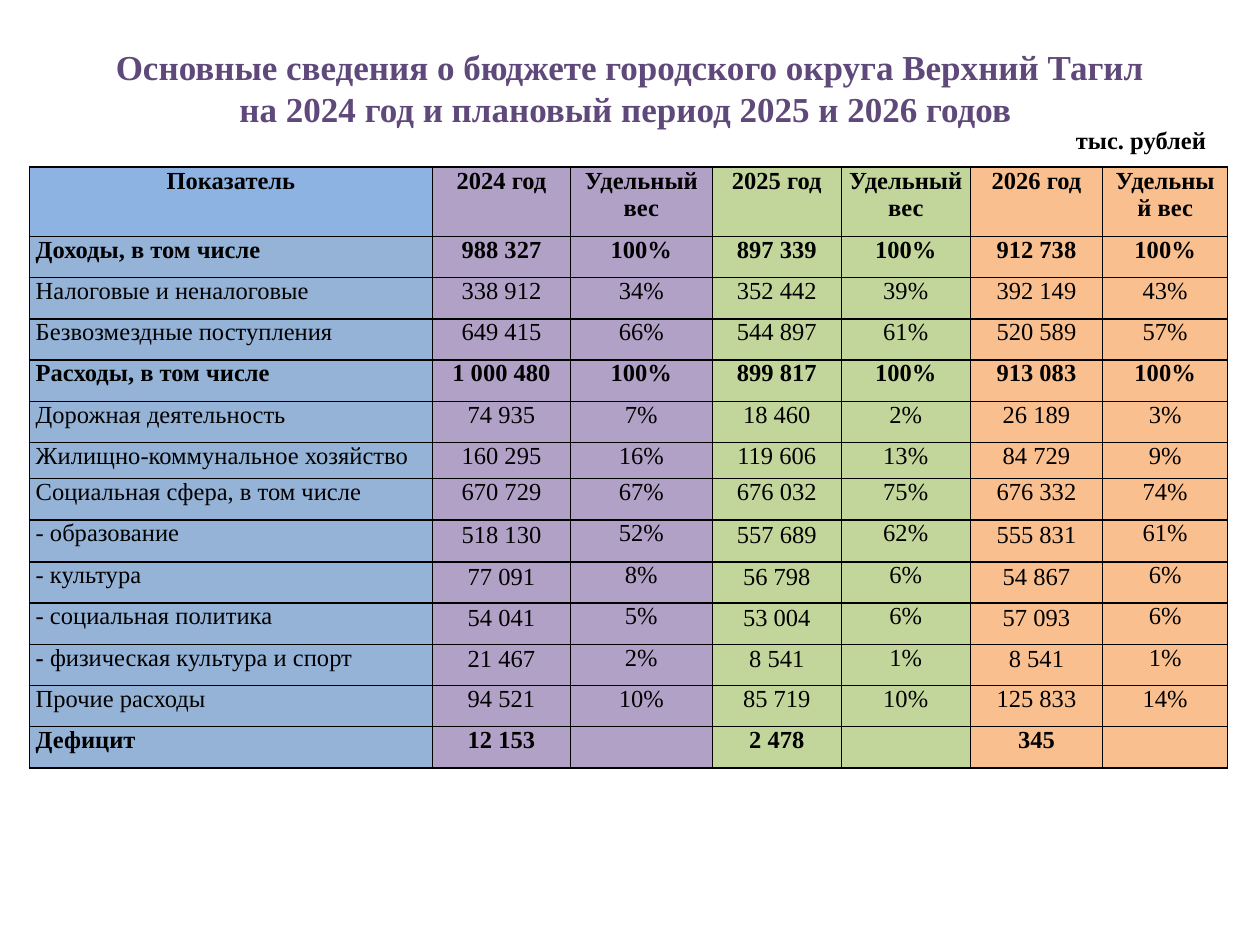
"""Build the slide with the town budget table for 2024-2026."""
from dataclasses import dataclass

from lxml.etree import SubElement
from pptx import Presentation
from pptx.dml.color import RGBColor
from pptx.enum.text import MSO_ANCHOR, MSO_AUTO_SIZE, PP_ALIGN
from pptx.oxml.ns import qn
from pptx.util import Cm, Pt

FONT = "Times New Roman"
COLORS = {
    "title": "5F497A",
    "text": "000000",
    "border": "000000",
    "header": "8DB3E2",
    "label": "95B3D7",
    "2024": "B2A1C7",
    "2025": "C2D69B",
    "2026": "FABF8F",
}
COLUMN_FILLS = ["label", "2024", "2024", "2025", "2025", "2026", "2026"]
COLUMN_WIDTHS = [8.13, 2.78, 2.86, 2.6, 2.6, 2.67, 2.52]
ROW_HEIGHT = 0.83


@dataclass
class BudgetRow:
    label: str
    values: list[str]
    bold: bool = False
    height: float = ROW_HEIGHT
    bold_dash: bool = False


SHARE = "Удельный вес"
ROWS = [
    BudgetRow("Показатель", ["2024 год", SHARE, "2025 год", SHARE, "2026 год", SHARE], True, 1.4),
    BudgetRow("Доходы, в том числе", ["988 327", "100%", "897 339", "100%", "912 738", "100%"], True),
    BudgetRow("Налоговые и неналоговые", ["338 912", "34%", "352 442", "39%", "392 149", "43%"]),
    BudgetRow("Безвозмездные поступления", ["649 415", "66%", "544 897", "61%", "520 589", "57%"]),
    BudgetRow("Расходы, в том числе", ["1 000 480", "100%", "899 817", "100%", "913 083", "100%"], True),
    BudgetRow("Дорожная деятельность", ["74 935", "7%", "18 460", "2%", "26 189", "3%"]),
    BudgetRow("Жилищно-коммунальное хозяйство", ["160 295", "16%", "119 606", "13%", "84 729", "9%"], height=0.73),
    BudgetRow("Социальная сфера, в том числе", ["670 729", "67%", "676 032", "75%", "676 332", "74%"]),
    BudgetRow("- образование", ["518 130", "52%", "557 689", "62%", "555 831", "61%"], height=0.85),
    BudgetRow("- культура", ["77 091", "8%", "56 798", "6%", "54 867", "6%"]),
    BudgetRow("- социальная политика", ["54 041", "5%", "53 004", "6%", "57 093", "6%"]),
    BudgetRow("- физическая культура и спорт", ["21 467", "2%", "8 541", "1%", "8 541", "1%"], bold_dash=True),
    BudgetRow("Прочие расходы", ["94 521", "10%", "85 719", "10%", "125 833", "14%"]),
    BudgetRow("Дефицит", ["12 153", "", "2 478", "", "345", ""], True),
]


def color(name: str) -> RGBColor:
    return RGBColor.from_string(COLORS[name])


def format_paragraph(paragraph, size: int, color_name: str, bold: bool, alignment: PP_ALIGN) -> None:
    paragraph.alignment = alignment
    font = paragraph.font
    font.name, font.size, font.bold = FONT, Pt(size), bold
    font.color.rgb = color(color_name)


def add_borders(cell) -> None:
    properties = cell._tc.get_or_add_tcPr()
    for position, side in enumerate(("lnL", "lnR", "lnT", "lnB")):
        line = SubElement(properties, qn(f"a:{side}"), w=str(Pt(1)))
        fill = SubElement(line, qn("a:solidFill"))
        SubElement(fill, qn("a:srgbClr"), val=COLORS["border"])
        properties.insert(position, line)


def fill_cell(cell, row: BudgetRow, column: int, is_header: bool) -> None:
    is_label = column == 0
    is_sub_amount = row.label.startswith("- ") and column % 2 == 1
    cell.margin_left = cell.margin_right = Cm(0.03 if is_sub_amount else 0.13)
    cell.margin_top = Cm(0.03 if is_sub_amount else 0)
    cell.margin_bottom = Cm(0)
    cell.fill.solid()
    cell.fill.fore_color.rgb = color("header" if is_header and is_label else COLUMN_FILLS[column])
    add_borders(cell)

    text = row.label if is_label else row.values[column - 1]
    paragraph = cell.text_frame.paragraphs[0]
    alignment = PP_ALIGN.LEFT if is_label and not is_header else PP_ALIGN.CENTER
    format_paragraph(paragraph, 14, "text", row.bold, alignment)
    if is_label and row.bold_dash:
        dash = paragraph.add_run()
        dash.text = "- "
        dash.font.bold = True
        text = text.removeprefix("- ")
    if text:
        paragraph.add_run().text = text


def add_title(slide) -> None:
    title = slide.shapes.title
    title.left, title.top, title.width, title.height = Cm(0), Cm(0), Cm(25.4), Cm(2.74)
    frame = title.text_frame
    frame.text = (
        "Основные сведения о бюджете городского округа Верхний Тагил\n"
        "на 2024 год и плановый период 2025 и 2026 годов "
    )
    frame.auto_size = MSO_AUTO_SIZE.NONE
    frame.vertical_anchor = MSO_ANCHOR.BOTTOM
    for paragraph in frame.paragraphs:
        format_paragraph(paragraph, 20, "title", True, PP_ALIGN.CENTER)


def add_budget_table(slide) -> None:
    frame = slide.shapes.add_table(
        len(ROWS), len(COLUMN_WIDTHS), Cm(0.59), Cm(3.37),
        Cm(sum(COLUMN_WIDTHS)), Cm(sum(row.height for row in ROWS)),
    )
    table = frame.table
    table.first_row = table.horz_banding = False
    for column, width in zip(table.columns, COLUMN_WIDTHS):
        column.width = Cm(width)
    for row_index, row in enumerate(ROWS):
        table.rows[row_index].height = Cm(row.height)
        for column_index in range(len(COLUMN_WIDTHS)):
            fill_cell(table.cell(row_index, column_index), row, column_index, row_index == 0)


def add_unit_note(slide) -> None:
    frame = slide.shapes.add_textbox(Cm(21.44), Cm(2.39), Cm(3.15), Cm(0.86)).text_frame
    frame.word_wrap = False
    frame.text = "тыс. рублей"
    format_paragraph(frame.paragraphs[0], 14, "text", True, PP_ALIGN.LEFT)


def main() -> None:
    presentation = Presentation()
    presentation.slide_width, presentation.slide_height = Cm(25.4), Cm(19.05)
    slide = presentation.slides.add_slide(presentation.slide_layouts[5])
    add_title(slide)
    add_budget_table(slide)
    add_unit_note(slide)
    presentation.save("out.pptx")


if __name__ == "__main__":
    main()
